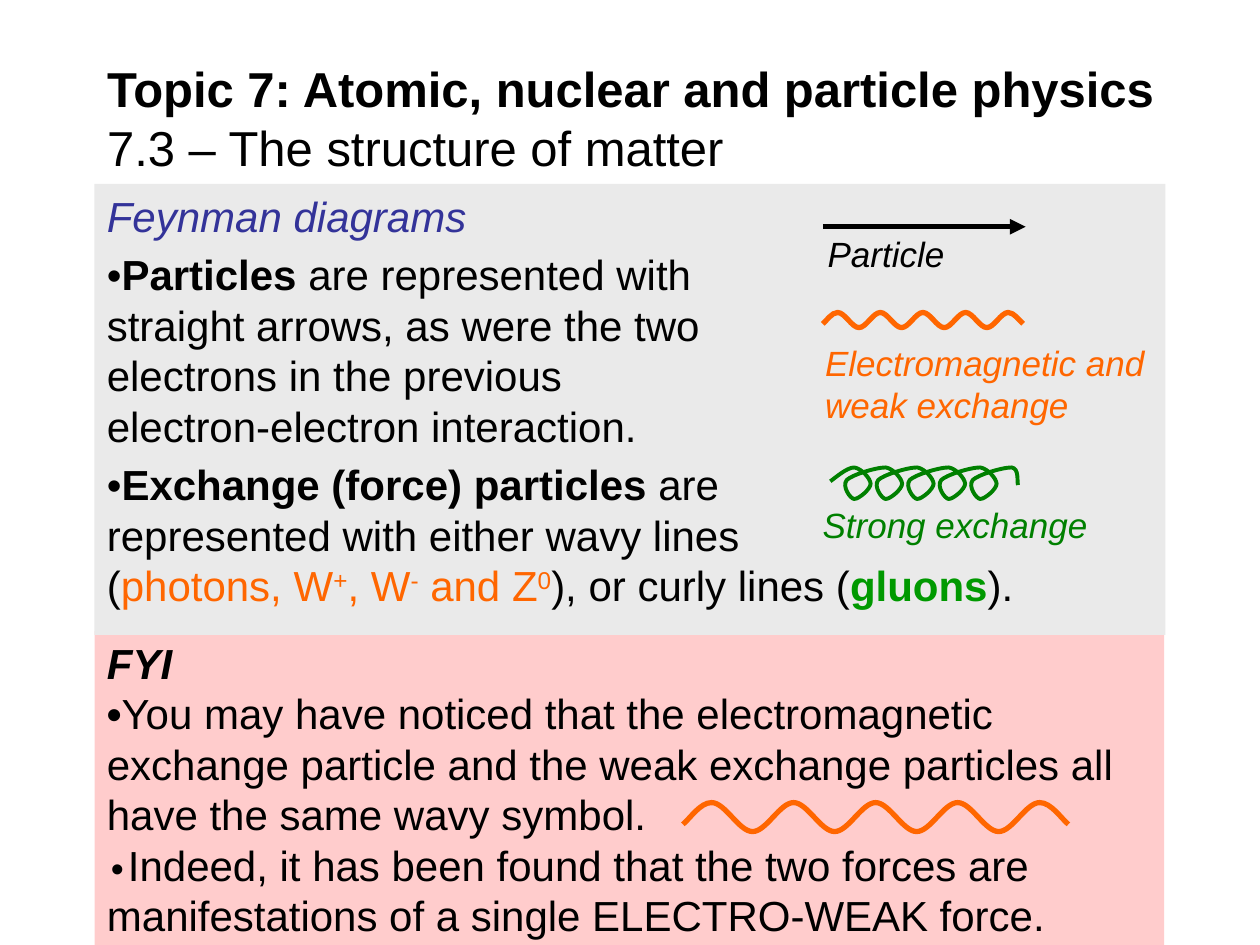
from pptx import Presentation
from pptx.dml.color import RGBColor
from pptx.enum.shapes import MSO_CONNECTOR as Conn, MSO_SHAPE as Shape
from pptx.enum.text import MSO_ANCHOR as Anchor, MSO_AUTO_SIZE as Auto, PP_ALIGN as Align
from pptx.oxml.ns import qn
from pptx.util import Inches, Pt
from lxml.etree import SubElement

BLACK, BLUE, ORANGE = "000000", "333399", "FF6600"
GREEN, BRIGHT, GRAY, PINK = "008000", "009900", "EAEAEA", "FFCCCC"
BOLD = {"bold": True}
FORCE = {"color": ORANGE}
SUPER = {"color": ORANGE, "raised": True}

# Content: paragraphs are lists of (words, format) runs
TITLE = [[("Topic 7: Atomic, nuclear and particle physics\n", BOLD),
          ("7.3 – The structure of matter", {})]]
FEYNMAN = [
    [("Feynman diagrams", {"color": BLUE, "italic": True})],
    [("•", {}), ("Particles", BOLD),
     (" are represented with\nstraight arrows, as were the two\n"
      "electrons in the previous\nelectron-electron interaction.", {})],
    [("•", {}), ("Exchange (force) particles", BOLD),
     (" are\nrepresented with either wavy lines\n(", {}),
     ("photons, W", FORCE), ("+", SUPER), (", W", FORCE), ("-", SUPER),
     (" and Z", FORCE), ("0", SUPER), ("), or curly lines (", {}),
     ("gluons", {"color": BRIGHT, "bold": True}), (").", {})],
]
FYI = [
    [("FYI", {"bold": True, "italic": True})],
    [("•", BOLD),
     ("You may have noticed that the electromagnetic exchange particle and the "
      "weak exchange particles all have the same wavy symbol.", {})],
    [("•", {"bold": True, "size": 20, "font": "Courier New"}),
     ("Indeed, it has been found that the two forces are manifestations of a "
      "single ELECTRO-WEAK force.", {})],
]
# fill, box, paragraphs, space before the later paragraphs
PANELS = [(PINK, (0.75, 5.01, 8.49, 2.49), FYI, 0),
          (GRAY, (0.75, 1.46, 8.5, 3.58), FEYNMAN, 4.8)]
WEAK = ("Electromagnetic and weak exchange", ORANGE, (6.45, 2.66, 3.27, 0.77))
STRONG = ("Strong exchange", GREEN, (6.43, 3.95, 2.89, 0.43))
PARTICLE = ("Particle", BLACK, (6.47, 1.8, 2.89, 0.43))
SMALL_WAVE = (6.53, 2.48, 1.59, 0.12)
LARGE_WAVE = (5.42, 6.37, 3.06, 0.23)

# Gluon line: cubic control points, relative to the top of each loop
LEAD = [(-0.19, 0.11), (-0.16, 0.09), (-0.06, 0), (0, 0)]
LOOP = [(0.06, 0.01), (0.13, 0.09), (0.13, 0.13), (0.13, 0.17), (0.04, 0.25), (0, 0.25),
        (-0.03, 0.25), (-0.1, 0.15), (-0.06, 0.1), (-0.02, 0.06), (0.17, 0), (0.25, 0)]
TAIL = [(0.06, 0.01), (0.04, 0.11), (0.05, 0.14)]
TOP, LOOPS, PITCH = (6.78, 3.71), 5, 0.25


def rgb(color):
    return RGBColor.from_string(color)


def write(shape, paras, gap=0, anchor=Anchor.TOP, fit=Auto.NONE, **base):
    frame = shape.text_frame
    frame.word_wrap, frame.auto_size, frame.vertical_anchor = True, fit, anchor
    for i, runs in enumerate(paras):
        para = frame.add_paragraph() if i else frame.paragraphs[0]
        para.alignment, para.line_spacing = Align.LEFT, 1.0
        para.space_before = Pt(gap if i else 0)
        for words, form in runs:
            form = {**base, **form}
            for j, line in enumerate(words.split("\n")):
                if j:
                    para.add_line_break()
                if not line:
                    continue
                run = para.add_run()
                run.text = line
                font = run.font
                font.name = form.get("font", "Arial")
                font.size = Pt(form.get("size", 24))
                font.bold = form.get("bold", False)
                font.italic = form.get("italic", False)
                font.color.rgb = rgb(form.get("color", BLACK))
                if form.get("raised"):
                    run._r.get_or_add_rPr().set("baseline", "30000")


def trace(shapes, points, color, width):
    """Draw a start point followed by three control points per cubic."""
    dots = [(Inches(x), Inches(y)) for x, y in points]
    pen = shapes.build_freeform(*dots[0])
    pen.add_line_segments(dots[1:], close=False)
    curve = pen.convert_to_shape()
    outline = next(curve._element.iter(qn("a:moveTo"))).getparent()
    lines = outline.findall(qn("a:lnTo"))
    for i in range(0, len(lines), 3):
        cubic = SubElement(outline, qn("a:cubicBezTo"))
        for line in lines[i:i + 3]:
            cubic.append(line[0])
            outline.remove(line)
    curve.shadow.inherit = False
    curve.fill.background()
    curve.line.color.rgb, curve.line.width = rgb(color), Pt(width)


def wave(left, top, width, height):
    """Five crests and four troughs, with a shorter piece at each end."""
    half = width / 9.4
    lead, low = 0.7 * half, top + 0.75 * height
    x = left + lead
    dots = [(left, low), (left + lead / 4, low - height / 5),
            (x - 0.4 * lead, top), (x, top)]
    for i in range(8):
        y, after = (top, top + height) if i % 2 == 0 else (top + height, top)
        dots += [(x + half / 3, y), (x + half * 2 / 3, after), (x + half, after)]
        x += half
    end = left + width
    dots += [(x + 0.4 * lead, top), (end - lead / 4, low - height / 5), (end, low)]
    return dots[::-1]


def curl():
    x, y = TOP
    parts = [(0, LEAD)] + [(k * PITCH, LOOP) for k in range(LOOPS)]
    parts.append((LOOPS * PITCH, TAIL))
    return [(x + shift + dx, y + dy) for shift, part in parts for dx, dy in part]


def label(shapes, words, color, box):
    note = shapes.add_textbox(*map(Inches, box))
    write(note, [[(words, {})]], fit=Auto.SHAPE_TO_FIT_TEXT,
          size=20, italic=True, color=color)


def main():
    deck = Presentation()
    deck.slide_width, deck.slide_height = Inches(10), Inches(7.5)
    shapes = deck.slides.add_slide(deck.slide_layouts[5]).shapes

    # Title
    title = shapes.title
    title.left, title.top, title.width, title.height = map(Inches, (0.75, 0.48, 8.89, 0.91))
    write(title, TITLE, anchor=Anchor.MIDDLE, size=28)

    # Text panels
    for fill, box, paras, gap in PANELS:
        panel = shapes.add_shape(Shape.RECTANGLE, *map(Inches, box))
        panel.shadow.inherit = False
        panel.fill.solid()
        panel.fill.fore_color.rgb = rgb(fill)
        panel.line.fill.background()
        write(panel, paras, gap)

    # Exchange lines
    trace(shapes, wave(*SMALL_WAVE), ORANGE, 3)
    label(shapes, *WEAK)
    trace(shapes, curl(), GREEN, 2.25)
    label(shapes, *STRONG)

    # Particle arrow
    arrow = shapes.add_connector(Conn.STRAIGHT, *map(Inches, (6.53, 1.8, 8.14, 1.8)))
    arrow.line.color.rgb, arrow.line.width = rgb(BLACK), Pt(3)
    SubElement(arrow.line._get_or_add_ln(), qn("a:tailEnd"), type="triangle")
    SubElement(arrow._element.spPr, qn("a:effectLst"))
    label(shapes, *PARTICLE)

    # Wave beside the note
    trace(shapes, wave(*LARGE_WAVE), ORANGE, 3)

    deck.save("out.pptx")


if __name__ == "__main__":
    main()
